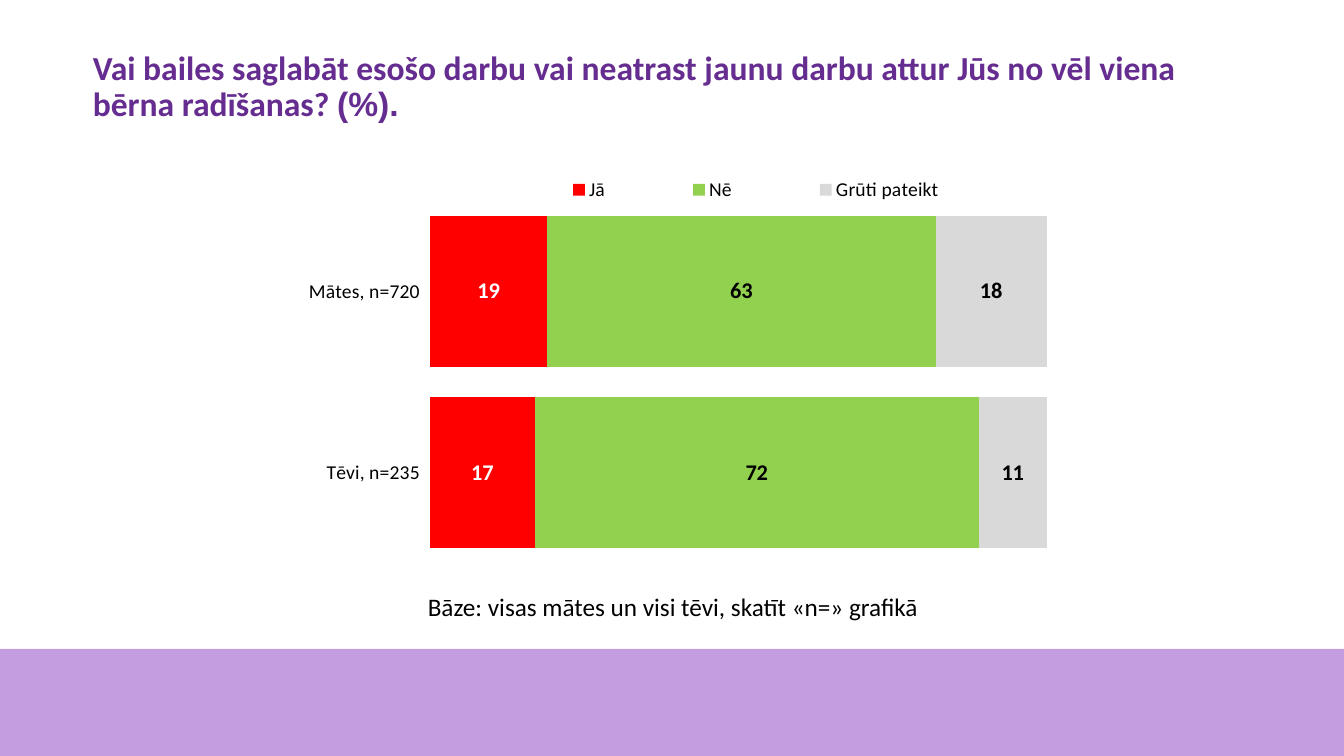
from lxml import etree
from pptx import Presentation
from pptx.chart.data import CategoryChartData
from pptx.dml.color import RGBColor
from pptx.enum.chart import XL_CHART_TYPE, XL_LEGEND_POSITION, XL_TICK_LABEL_POSITION
from pptx.enum.shapes import MSO_SHAPE
from pptx.enum.text import MSO_ANCHOR
from pptx.oxml.ns import qn
from pptx.util import Pt

PX = 9525
SLIDE_W, SLIDE_H = 1280, 720
BAND_TOP = 618

BLACK = RGBColor(0x00, 0x00, 0x00)
WHITE = RGBColor(0xFF, 0xFF, 0xFF)
PURPLE = RGBColor(0x66, 0x2D, 0x91)
LILAC = RGBColor(0xC4, 0x9D, 0xE1)
RED = RGBColor(0xFF, 0x00, 0x00)
GREEN = RGBColor(0x92, 0xD0, 0x50)
GREY = RGBColor(0xD9, 0xD9, 0xD9)

BAR_STACKED_100 = XL_CHART_TYPE.BAR_STACKED_100
LEGEND_RIGHT = XL_LEGEND_POSITION.RIGHT
LABELS_LOW = XL_TICK_LABEL_POSITION.LOW
RECTANGLE = MSO_SHAPE.RECTANGLE
TOP, MIDDLE = MSO_ANCHOR.TOP, MSO_ANCHOR.MIDDLE

TITLE_FORMAT = {"size": Pt(24), "bold": True, "name": "Calibri"}
NOTE_FORMAT = {"size": Pt(18), "bold": False, "name": "Calibri"}
CHART_FORMAT = {"size": Pt(14), "bold": False, "name": "Calibri"}
LABEL_FORMAT = {"size": Pt(16), "bold": True, "name": "Calibri"}

TITLE = [
    ("Vai bailes saglabāt esošo darbu vai neatrast jaunu darbu attur Jūs "
     "no vēl viena bērna radīšanas? ", TITLE_FORMAT),
    ("(%).", {**TITLE_FORMAT, "name": "Arial"}),
]
NOTE = [("Bāze: visas mātes un visi tēvi, skatīt «n=» grafikā", NOTE_FORMAT)]

CATEGORIES = ["Mātes, n=720", "Tēvi, n=235"]
ANSWERS = [
    ("Jā", (19, 17), RED, WHITE),
    ("Nē", (63, 72), GREEN, BLACK),
    ("Grūti pateikt", (18, 11), GREY, BLACK),
]
# Fractions of the chart: left, top, width, height
PLOT_AREA = (0.27, 0.13, 0.7, 0.85)
LEGEND_AREA = (0.34, 0.06, 0.6, 0.09)


def scaled(box):
    return [length * PX for length in box]


def set_font(font, values, color):
    for name, value in values.items():
        setattr(font, name, value)
    font.color.rgb = color


def add_text(page, box, spans, color, spacing, anchor):
    frame = page.shapes.add_textbox(*scaled(box)).text_frame
    frame.word_wrap = True
    frame.vertical_anchor = anchor
    para = frame.paragraphs[0]
    para.line_spacing = spacing
    for text, values in spans:
        span = para.add_run()
        span.text = text
        set_font(span.font, values, color)


def add_band(page, box):
    band = page.shapes.add_shape(RECTANGLE, *scaled(box))
    band.shadow.inherit = False
    band.fill.solid()
    band.fill.fore_color.rgb = LILAC
    band.line.fill.background()


def set_layout(layout, area, inner=False):
    """Fix a chart part at the given fractions of the chart."""
    for child in list(layout):
        layout.remove(child)
    manual = etree.SubElement(layout, qn("c:manualLayout"))
    values = [("layoutTarget", "inner")] if inner else []
    values += [("xMode", "edge"), ("yMode", "edge"), *zip("xywh", area)]
    for tag, value in values:
        etree.SubElement(manual, qn(f"c:{tag}")).set("val", str(value))


def style_axes(chart):
    category_axis = chart.category_axis
    category_axis.reverse_order = True
    category_axis.has_major_gridlines = False
    category_axis.tick_label_position = LABELS_LOW
    category_axis.format.line.color.rgb = WHITE
    category_axis.format.line.width = Pt(0.75)
    value_axis = chart.value_axis
    value_axis.minimum_scale = 0
    value_axis.has_major_gridlines = False
    value_axis.visible = False


def style_series(plot):
    for series, (_, _, color, label_color) in zip(plot.series, ANSWERS):
        series.format.fill.solid()
        series.format.fill.fore_color.rgb = color
        labels = series.data_labels
        labels.show_value = True
        labels.number_format = "0"
        labels.number_format_is_linked = False
        set_font(labels.font, LABEL_FORMAT, label_color)


def add_answer_chart(page, box):
    data = CategoryChartData(number_format="0")
    data.categories = CATEGORIES
    for name, values, _, _ in ANSWERS:
        data.add_series(name, values)
    chart = page.shapes.add_chart(BAR_STACKED_100, *scaled(box), data).chart
    chart.has_title = False
    set_font(chart.font, CHART_FORMAT, BLACK)

    plot = chart.plots[0]
    plot.vary_by_categories = False
    plot.gap_width = 20
    plot.overlap = 100
    style_series(plot)
    style_axes(chart)

    chart.has_legend = True
    chart.legend.position = LEGEND_RIGHT
    chart.legend.include_in_layout = False
    plot_area = chart.element.find(f".//{qn('c:plotArea')}")
    plot_layout = plot_area.find(qn("c:layout"))
    if plot_layout is None:
        plot_layout = etree.Element(qn("c:layout"))
        plot_area.insert(0, plot_layout)
    set_layout(plot_layout, PLOT_AREA, inner=True)

    legend = chart.element.find(f".//{qn('c:legend')}")
    legend_layout = legend.find(qn("c:layout"))
    if legend_layout is None:
        legend_layout = etree.Element(qn("c:layout"))
        legend.find(qn("c:legendPos")).addnext(legend_layout)
    set_layout(legend_layout, LEGEND_AREA)


def main():
    deck = Presentation()
    deck.slide_width, deck.slide_height = scaled((SLIDE_W, SLIDE_H))
    page = deck.slides.add_slide(deck.slide_layouts[6])
    add_band(page, (0, BAND_TOP, SLIDE_W, SLIDE_H - BAND_TOP))
    add_text(page, (79, 14, 1104, 139), TITLE, PURPLE, 0.9, MIDDLE)
    add_text(page, (398, 544, 756, 49), NOTE, BLACK, 1.5, TOP)
    add_answer_chart(page, (183, 138, 839, 407))
    deck.save("out.pptx")


if __name__ == "__main__":
    main()
